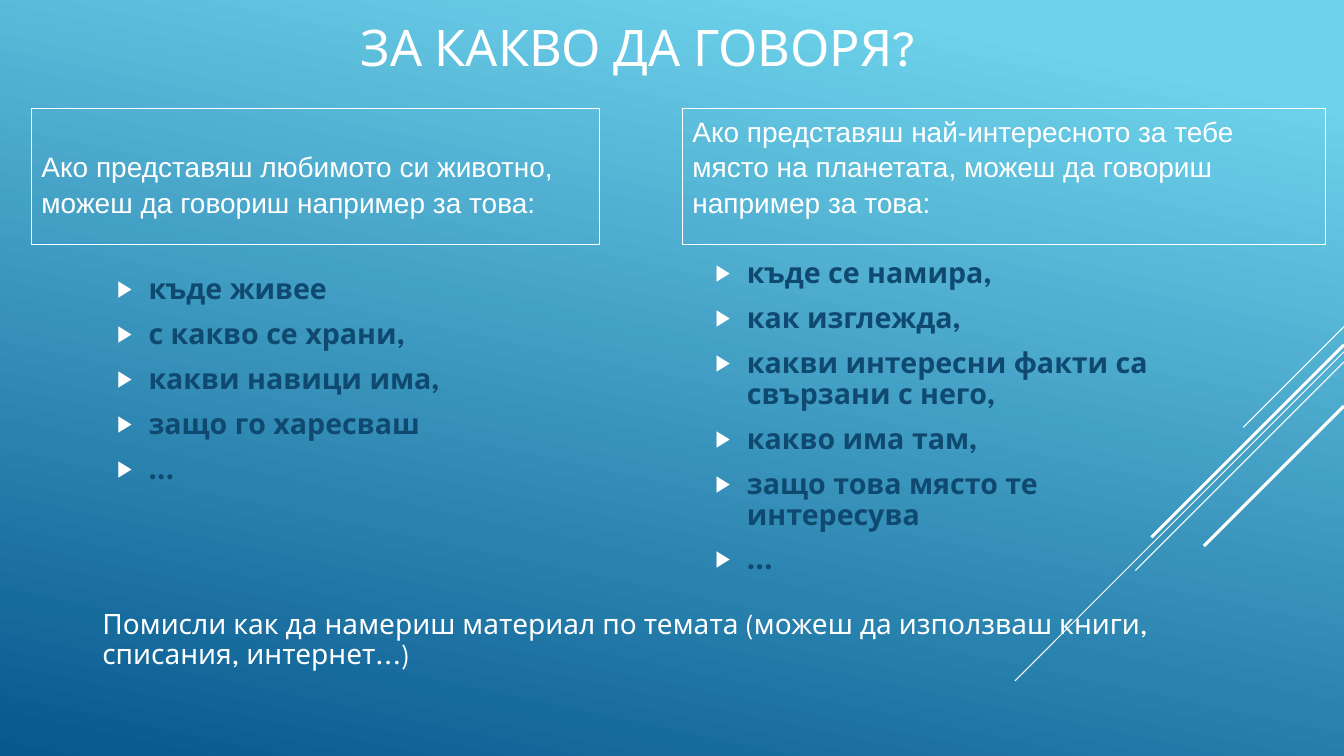
from lxml.etree import SubElement
from pptx import Presentation
from pptx.dml.color import RGBColor
from pptx.enum.shapes import MSO_CONNECTOR, MSO_SHAPE
from pptx.enum.text import MSO_ANCHOR, PP_ALIGN
from pptx.oxml.ns import qn
from pptx.util import Pt

WHITE = RGBColor(0xFF, 0xFF, 0xFF)
NAVY = RGBColor(0x0F, 0x49, 0x6F)
SKY = RGBColor(0x6E, 0xD2, 0xEB)
OCEAN = RGBColor(0x06, 0x58, 0x8E)
DISPLAY_FONT = "League Spartan"
HEADING_FONT = "Arial"
SLIDE_WIDTH, SLIDE_HEIGHT = 960, 540

# Top at the right edge, horizontal run, line width
DIAGONALS = [
    (233.3, 72, 0.75),
    (251.3, 235, 0.75),
    (258.5, 149, 0.75),
    (246.3, 137.5, 2.25),
    (290, 100, 2.25),
]
ANIMAL_HEADING = "Ако представяш любимото си животно, можеш да говориш например за това:"
ANIMAL_POINTS = [
    "къде живее",
    "с какво се храни,",
    "какви навици има,",
    "защо го харесваш",
    "...",
]
PLACE_HEADING = (
    "Ако представяш най-интересното за тебе място на планетата, "
    "можеш да говориш например за това:"
)
PLACE_POINTS = [
    "къде се намира,",
    "как изглежда,",
    "какви интересни факти са свързани с него,",
    "какво има там,",
    "защо това място те интересува",
    "...",
]
CLOSING = (
    "Помисли как да намериш материал по темата "
    "(можеш да използваш книги, списания, интернет...)"
)


def paint_background(slide):
    fill = slide.background.fill
    fill.gradient()
    fill.gradient_angle = 258
    for stop, position, color in zip(fill.gradient_stops, (0.1, 1), (SKY, OCEAN)):
        stop.position = position
        stop.color.rgb = color


def add_diagonal(slide, top, run, width):
    connector = slide.shapes.add_connector(
        MSO_CONNECTOR.STRAIGHT,
        Pt(SLIDE_WIDTH), Pt(top), Pt(SLIDE_WIDTH - run), Pt(top + run),
    )
    connector.line.color.rgb = WHITE
    connector.line.width = Pt(width)
    SubElement(connector._element.spPr, qn("a:effectLst"))


def style_paragraph(paragraph, text, size, font=DISPLAY_FONT, color=WHITE, spacing=0.9):
    paragraph.text = text
    paragraph.alignment = PP_ALIGN.LEFT
    paragraph.line_spacing = spacing
    paragraph.font.size = Pt(size)
    paragraph.font.name = font
    paragraph.font.color.rgb = color


def add_text(slide, box, text, size, anchor=MSO_ANCHOR.TOP):
    frame = slide.shapes.add_textbox(*map(Pt, box)).text_frame
    frame.word_wrap = True
    frame.vertical_anchor = anchor
    style_paragraph(frame.paragraphs[0], text, size)


def add_heading(slide, left, width, text):
    shape = slide.shapes.add_shape(
        MSO_SHAPE.RECTANGLE, Pt(left), Pt(77.5), Pt(width), Pt(97)
    )
    shape.shadow.inherit = False
    shape.fill.background()
    shape.line.color.rgb = WHITE
    shape.line.width = Pt(0.75)
    frame = shape.text_frame
    frame.word_wrap = True
    frame.vertical_anchor = MSO_ANCHOR.BOTTOM
    frame.margin_bottom = Pt(18)
    style_paragraph(frame.paragraphs[0], text, 20, font=HEADING_FONT, spacing=1.06)


def add_bullet(paragraph):
    properties = paragraph._p.get_or_add_pPr()
    properties.set("marL", str(Pt(58.5)))
    properties.set("indent", str(Pt(-22.5)))
    color = SubElement(properties, qn("a:buClr"))
    SubElement(color, qn("a:srgbClr"), val=str(WHITE))
    SubElement(properties, qn("a:buSzPct"), val="80000")
    SubElement(properties, qn("a:buFont"), typeface=HEADING_FONT)
    SubElement(properties, qn("a:buChar"), char="▶")


def add_bullet_list(slide, box, points):
    frame = slide.shapes.add_textbox(*map(Pt, box)).text_frame
    frame.word_wrap = True
    for index, point in enumerate(points):
        paragraph = frame.add_paragraph() if index else frame.paragraphs[0]
        style_paragraph(paragraph, point, 20.4, color=NAVY)
        paragraph.font.bold = True
        paragraph.space_before = Pt(4)
        paragraph.space_after = Pt(6)
        add_bullet(paragraph)


def main():
    presentation = Presentation()
    presentation.slide_width = Pt(SLIDE_WIDTH)
    presentation.slide_height = Pt(SLIDE_HEIGHT)
    slide = presentation.slides.add_slide(presentation.slide_layouts[6])

    # Background and diagonal lines
    paint_background(slide)
    for top, run, width in DIAGONALS:
        add_diagonal(slide, top, run, width)

    # Title
    add_text(slide, (250.5, 1.5, 459.5, 68.5), "ЗА КАКВО ДА ГОВОРЯ?", 36, MSO_ANCHOR.MIDDLE)

    # Animal column
    add_heading(slide, 22.5, 406, ANIMAL_HEADING)
    add_bullet_list(slide, (40.5, 193, 406, 234), ANIMAL_POINTS)

    # Place column
    add_heading(slide, 487.5, 459.5, PLACE_HEADING)
    add_bullet_list(slide, (468, 181.5, 388, 234), PLACE_POINTS)

    # Closing advice
    add_text(slide, (66, 432.5, 863, 56), CLOSING, 20)

    presentation.save("out.pptx")


if __name__ == "__main__":
    main()
